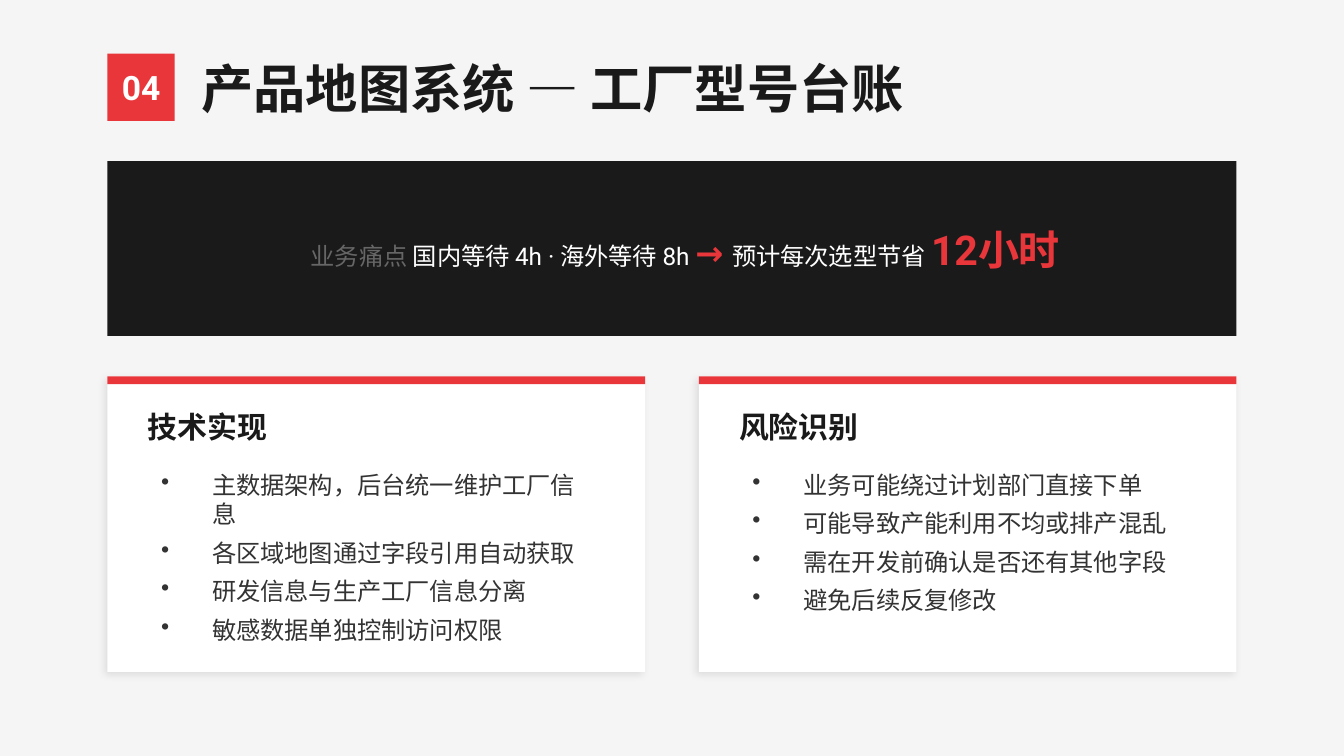
from lxml.etree import SubElement
from pptx import Presentation
from pptx.dml.color import RGBColor
from pptx.enum.shapes import MSO_SHAPE
from pptx.enum.text import MSO_ANCHOR, PP_ALIGN
from pptx.oxml.ns import qn
from pptx.util import Inches, Pt

RED, DARK, WHITE = "E8363B", "1A1A1A", "FFFFFF"
FACE = "Roboto"


def paint(color, code):
    color.rgb = RGBColor.from_string(code)


def add_box(slide, x, y, w, h, code):
    box = slide.shapes.add_shape(
        MSO_SHAPE.RECTANGLE, Inches(x), Inches(y), Inches(w), Inches(h))
    box.shadow.inherit = False
    box.fill.solid()
    paint(box.fill.fore_color, code)
    box.line.fill.background()
    return box


def add_shadow(box):
    effects = box._element.spPr.find(qn("a:effectLst"))
    outer = SubElement(effects, qn("a:outerShdw"), blurRad=str(Pt(4)),
                       dist=str(Pt(2)), dir=str(135 * 60000), algn="bl",
                       rotWithShape="0")
    black = SubElement(outer, qn("a:srgbClr"), val="000000")
    SubElement(black, qn("a:alpha"), val="10000")


def style(font, size, code, bold=False):
    font.size, font.bold, font.name = Pt(size), bold, FACE
    paint(font.color, code)


def add_frame(slide, x, y, w, h):
    area = slide.shapes.add_textbox(
        Inches(x), Inches(y), Inches(w), Inches(h))
    frame = area.text_frame
    frame.word_wrap = True
    return frame


def add_label(slide, x, y, w, h, align=PP_ALIGN.LEFT):
    """Add a box without margins and return its one paragraph."""
    frame = add_frame(slide, x, y, w, h)
    frame.margin_left = frame.margin_right = 0
    frame.margin_top = frame.margin_bottom = 0
    frame.vertical_anchor = MSO_ANCHOR.MIDDLE
    para = frame.paragraphs[0]
    para.alignment = align
    return para


def add_title(slide, x, y, w, h, text, size, code,
              align=PP_ALIGN.LEFT):
    para = add_label(slide, x, y, w, h, align)
    para.text = text
    style(para.font, size, code, True)


def add_list(slide, x, y, w, h, items):
    frame = add_frame(slide, x, y, w, h)
    for i, item in enumerate(items):
        para = frame.add_paragraph() if i else frame.paragraphs[0]
        para.text = item
        para.space_after = Pt(5)
        props = para._p.get_or_add_pPr()
        props.set("marL", str(Inches(0.38)))
        props.set("indent", str(-Inches(0.38)))
        SubElement(props, qn("a:buChar"), char="•")
        style(para.font, 13, "333333")


def add_banner(slide):
    add_box(slide, 0.8, 1.2, 8.4, 1.3, DARK)
    para = add_label(slide, 1.2, 1.2, 7.8, 1.3, PP_ALIGN.CENTER)
    parts = [
        ("业务痛点 ", 13, "666666", False),
        ("国内等待 4h · 海外等待 8h ", 13, WHITE, False),
        ("→ ", 18, RED, True),
        ("预计每次选型节省 ", 13, WHITE, False),
        ("12小时", 22, RED, True),
    ]
    for text, size, code, bold in parts:
        run = para.add_run()
        run.text = text
        style(run.font, size, code, bold)


def add_card(slide, x, title, items):
    add_shadow(add_box(slide, x, 2.8, 4, 2.2, WHITE))
    add_box(slide, x, 2.8, 4, 0.06, RED)
    add_title(slide, x + 0.3, 3, 3.4, 0.35, title, 16, DARK)
    add_list(slide, x + 0.3, 3.45, 3.4, 1.4, items)


def main():
    deck = Presentation()
    deck.slide_width = Inches(10)
    deck.slide_height = Inches(10) * 9 // 16
    slide = deck.slides.add_slide(deck.slide_layouts[6])
    slide.background.fill.solid()
    paint(slide.background.fill.fore_color, "F5F5F5")

    add_box(slide, 0.8, 0.4, 0.5, 0.5, RED)
    add_title(slide, 0.8, 0.4, 0.5, 0.5, "04", 18, WHITE, PP_ALIGN.CENTER)
    add_title(slide, 1.5, 0.4, 7, 0.5, "产品地图系统 — 工厂型号台账", 28, DARK)
    add_banner(slide)

    cards = [
        ("技术实现", ["主数据架构，后台统一维护工厂信息",
                  "各区域地图通过字段引用自动获取",
                  "研发信息与生产工厂信息分离",
                  "敏感数据单独控制访问权限"]),
        ("风险识别", ["业务可能绕过计划部门直接下单",
                  "可能导致产能利用不均或排产混乱",
                  "需在开发前确认是否还有其他字段",
                  "避免后续反复修改"]),
    ]
    for i, (title, items) in enumerate(cards):
        add_card(slide, 0.8 + 4.4 * i, title, items)
    deck.save("out.pptx")


if __name__ == "__main__":
    main()
